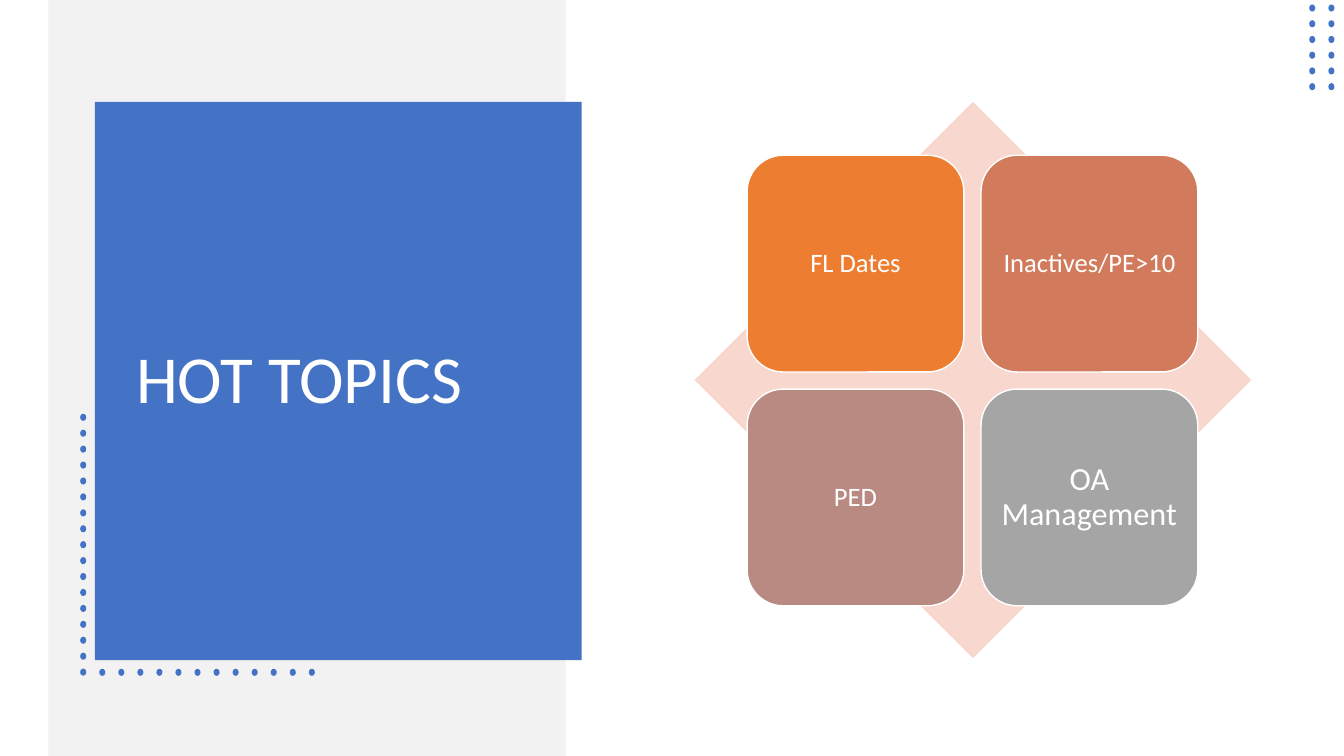
from pptx import Presentation
from pptx.dml.color import RGBColor
from pptx.enum import shapes, text
from pptx.util import Inches, Pt

COLORS = {
    "band": "F2F2F2", "blue": "4472C4", "white": "FFFFFF", "diamond": "F8D7CE",
    "orange": "ED7D31", "rust": "D17B5C", "mauve": "B98A82", "gray": "A5A5A5",
}
SHAPE = shapes.MSO_SHAPE


def add_filled(parent, kind, left, top, width, height, color):
    sp = parent.add_shape(kind, Inches(left), Inches(top), Inches(width), Inches(height))
    sp.shadow.inherit = False
    sp.fill.solid()
    sp.fill.fore_color.rgb = RGBColor.from_string(COLORS[color])
    sp.line.fill.background()
    return sp


def format_text(sp, label, size, align):
    tf = sp.text_frame
    tf.text = label
    tf.word_wrap = True
    tf.auto_size = text.MSO_AUTO_SIZE.NONE
    tf.vertical_anchor = text.MSO_ANCHOR.MIDDLE
    p = tf.paragraphs[0]
    p.alignment = align
    p.line_spacing = 0.9
    p.font.name = "Calibri"
    p.font.size = Pt(size)
    p.font.color.rgb = RGBColor.from_string(COLORS["white"])
    return tf


prs = Presentation()
prs.slide_width, prs.slide_height = Inches(13.33), Inches(7.5)
s = prs.slides.add_slide(prs.slide_layouts[5])

# Background band
add_filled(s.shapes, SHAPE.RECTANGLE, 0.48, 0, 5.13, 7.5, "band")

# Dot positions: corner grid, then an L of a column and a row
corner_dots = [(12.98 + 0.19 * col, 0.05 + 0.156 * row) for row in range(6) for col in range(2)]
column_dots = [(0.79, 4.11 + 0.158 * i) for i in range(17)]
row_dots = [(0.79 + 0.189 * i, 6.64) for i in range(1, 13)]

# Dots and the blue title panel
for dots in (corner_dots, column_dots + row_dots):
    group = s.shapes.add_group_shape()
    for left, top in dots:
        dot = add_filled(group.shapes, SHAPE.OVAL, left, top, 0.07, 0.06, "blue")
        dot.rotation = 90
    if dots is corner_dots:
        add_filled(s.shapes, SHAPE.RECTANGLE, 0.94, 1.01, 4.83, 5.54, "blue")

# Title, raised above the panel
title = s.shapes.title
title.left, title.top = Inches(1.25), Inches(1.45)
title.width, title.height = Inches(4.14), Inches(4.68)
format_text(title, "HOT TOPICS", 48, text.PP_ALIGN.LEFT)
title.element.getparent().append(title.element)

# Diamond with four topic tiles
matrix = s.shapes.add_group_shape()
add_filled(matrix.shapes, SHAPE.DIAMOND, 6.89, 1.01, 5.52, 5.52, "diamond")
topics = [
    ("FL Dates", "orange", 19),
    ("Inactives/PE>10", "rust", 19),
    ("PED", "mauve", 19),
    ("OA Management", "gray", 23),
]
for i, (label, color, size) in enumerate(topics):
    row, col = divmod(i, 2)
    tile = add_filled(matrix.shapes, SHAPE.ROUNDED_RECTANGLE,
                      7.41 + 2.32 * col, 1.54 + 2.32 * row, 2.15, 2.15, color)
    tile.line.color.rgb = RGBColor.from_string(COLORS["white"])
    tile.line.width = Pt(1)
    tf = format_text(tile, label, size, text.PP_ALIGN.CENTER)
    tf.margin_left = tf.margin_right = tf.margin_top = tf.margin_bottom = Inches(0.08)

prs.save("out.pptx")
